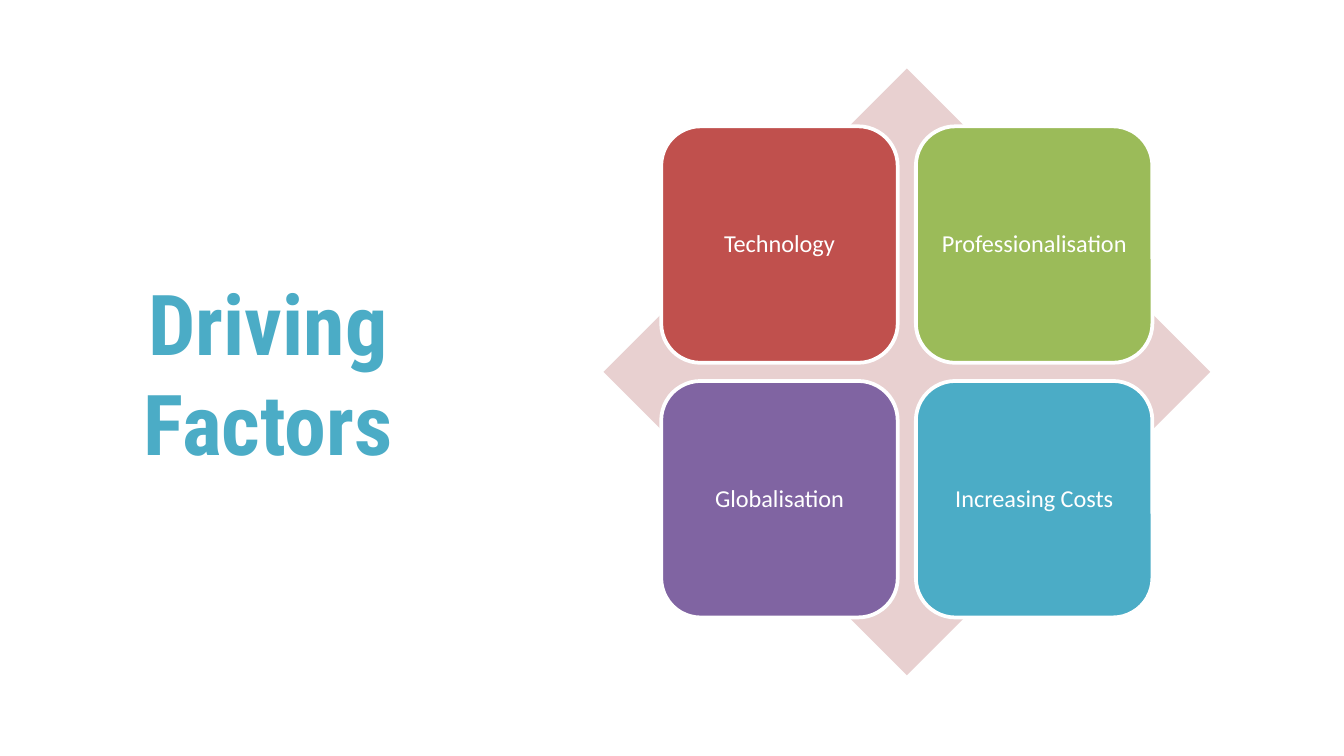
from pptx import Presentation
from pptx.dml.color import RGBColor
from pptx.enum.shapes import MSO_SHAPE
from pptx.enum.text import MSO_ANCHOR, MSO_AUTO_SIZE, PP_ALIGN
from pptx.util import Emu, Pt

DIAMOND, ROUND = MSO_SHAPE.DIAMOND, MSO_SHAPE.ROUNDED_RECTANGLE
MIDDLE, CENTER, NO_FIT = MSO_ANCHOR.MIDDLE, PP_ALIGN.CENTER, MSO_AUTO_SIZE.NONE
SCALE = 4572  # 200 px to the inch

TILES = [
    ("Technology", "C0504D"),
    ("Professionalisation", "9BBB59"),
    ("Globalisation", "8064A2"),
    ("Increasing Costs", "4BACC6"),
]


def px(n):
    return Emu(n * SCALE)


def color(code):
    return RGBColor.from_string(code)


def write(shape, text, font, size, code, bold=False):
    frame = shape.text_frame
    frame.word_wrap = True
    frame.auto_size = NO_FIT
    frame.vertical_anchor = MIDDLE
    para = frame.paragraphs[0]
    para.alignment = CENTER
    run = para.add_run()
    run.text = text
    run.font.name = font
    run.font.size = Pt(size)
    run.font.bold = bold
    run.font.color.rgb = color(code)
    return frame


def add_title(slide, x, y, w, h):
    title = slide.shapes.title
    title.left, title.top, title.width, title.height = map(px, (x, y, w, h))
    write(title, "Driving Factors", "Roboto Condensed", 45, "4BACC6", True)


def add_block(group, kind, x, y, side, fill):
    block = group.shapes.add_shape(kind, px(x), px(y), px(side), px(side))
    block.shadow.inherit = False
    block.fill.solid()
    block.fill.fore_color.rgb = color(fill)
    block.line.fill.background()
    return block


def add_matrix(slide, x, y, size):
    """Draw a diamond with a two by two grid of tiles centred on it."""
    group = slide.shapes.add_group_shape()
    add_block(group, DIAMOND, x, y, size, "E8D0D0")
    side, gap = 352, 27
    inset = (size - 2 * side - gap) // 2
    for i, (text, fill) in enumerate(TILES):
        row, col = divmod(i, 2)
        left = x + inset + col * (side + gap)
        top = y + inset + row * (side + gap)
        tile = add_block(group, ROUND, left, top, side, fill)
        tile.line.color.rgb = color("FFFFFF")
        tile.line.width = Pt(2)
        frame = write(tile, text, "Calibri", 13, "FFFFFF")
        frame.margin_left = frame.margin_right = px(10)
        frame.margin_top = frame.margin_bottom = px(10)
        frame.paragraphs[0].line_spacing = 0.9


def main():
    deck = Presentation()
    deck.slide_width, deck.slide_height = px(2000), px(1125)
    slide = deck.slides.add_slide(deck.slide_layouts[5])
    add_title(slide, 87, 102, 624, 903)
    add_matrix(slide, 898, 102, 903)
    deck.save("out.pptx")


if __name__ == "__main__":
    main()
